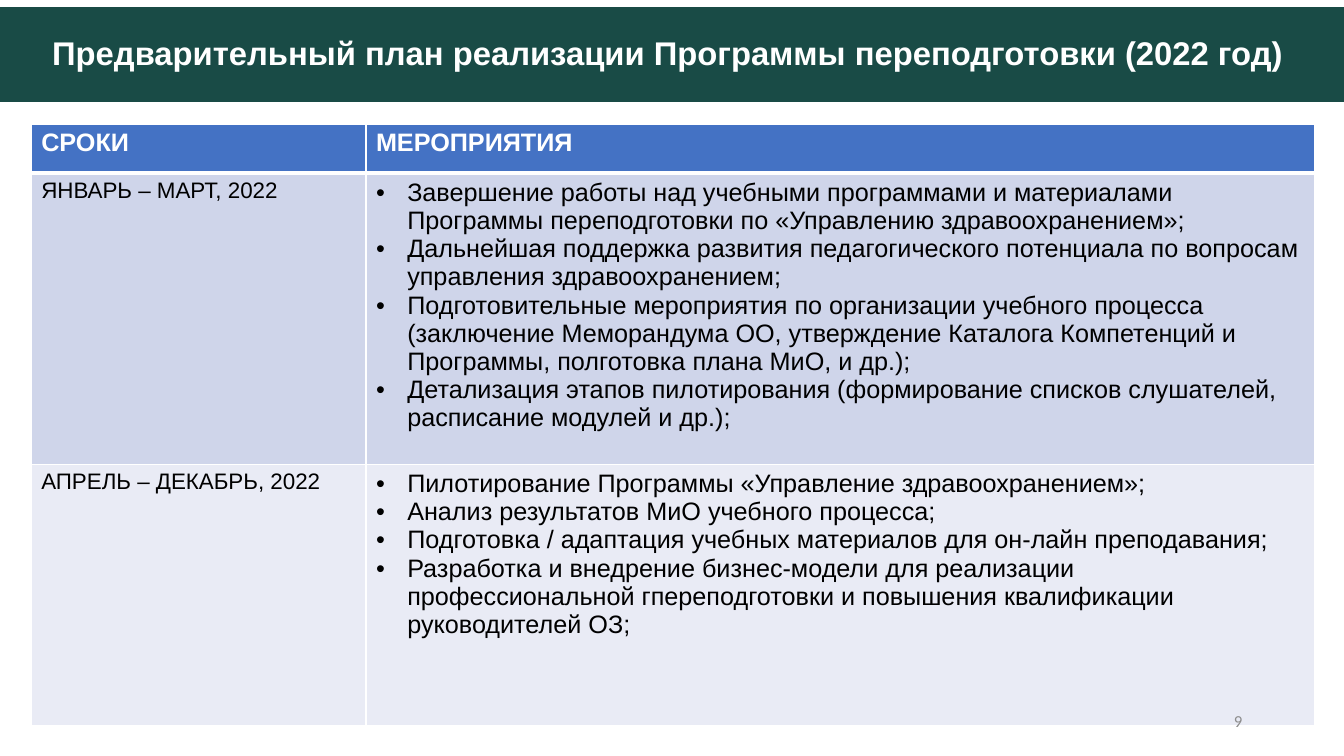
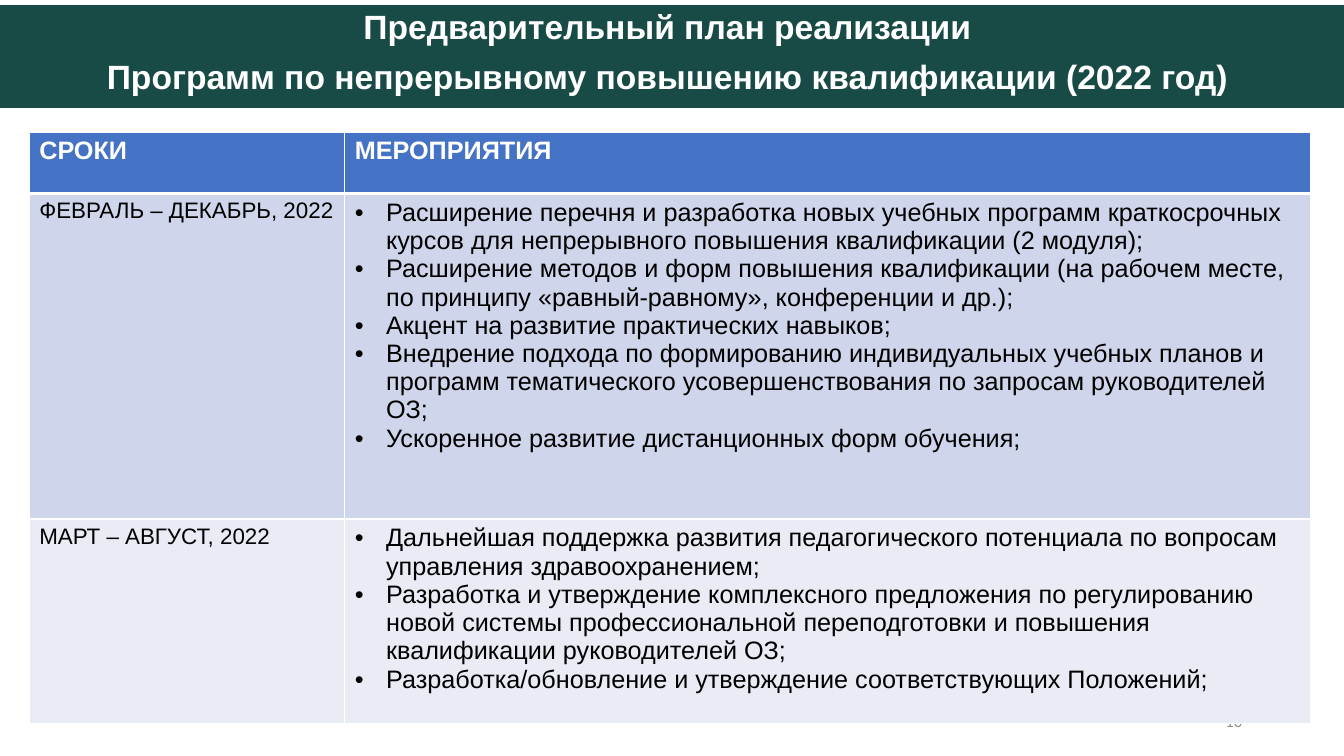
import pptx
import pptx.util
import pptx.dml.color
import pptx.enum.shapes
import pptx.enum.text
import pptx.oxml
import pptx.oxml.ns

COLORS = {
    "band": "194B46",
    "header": "4472C4",
    "odd_row": "CFD5EA",
    "even_row": "E9EBF5",
    "white": "FFFFFF",
    "black": "000000",
    "number": "8C8C8C",
}
SLIDE_WIDTH, SLIDE_HEIGHT = 13.33, 7.5
NUMBER_BOX = (9.42, 6.95, 3, 0.4)
BULLET_INDENT = 0.31
HEADINGS = ("СРОКИ", "МЕРОПРИЯТИЯ")
ROW_FILLS = ("header", "odd_row", "even_row")
ALIGN = pptx.enum.text.PP_ALIGN
ANCHOR = pptx.enum.text.MSO_ANCHOR

PLANS = [
    {
        "title": ["Предварительный план реализации Программы переподготовки (2022 год) "],
        "title_size": 23.4,
        "title_anchor": ANCHOR.MIDDLE,
        "title_space": 0,
        "band": (0.07, 0.94),
        "number": "9",
        "number_on_top": True,
        "table_corner": (0.31, 1.23),
        "columns": (3.32, 9.41),
        "rows": (0.49, 2.89, 2.59),
        "periods": [
            ("ЯНВАРЬ – МАРТ, 2022", [
                "Завершение работы над учебными программами и материалами Программы переподготовки по «Управлению здравоохранением»;",
                "Дальнейшая поддержка развития педагогического потенциала по вопросам управления здравоохранением;",
                "Подготовительные мероприятия по организации учебного процесса (заключение Меморандума ОО, утверждение Каталога Компетенций и Программы, полготовка плана МиО, и др.);",
                "Детализация этапов пилотирования (формирование списков слушателей, расписание модулей и др.);",
            ]),
            ("АПРЕЛЬ – ДЕКАБРЬ, 2022", [
                "Пилотирование Программы «Управление здравоохранением»;",
                "Анализ результатов МиО учебного процесса;",
                "Подготовка / адаптация учебных материалов для он-лайн преподавания;",
                "Разработка и внедрение бизнес-модели для реализации профессиональной гпереподготовки и повышения квалификации руководителей ОЗ;",
            ]),
        ],
    },
    {
        "title": [
            "Предварительный план реализации ",
            "Программ по непрерывному повышению квалификации (2022 год) ",
        ],
        "title_size": 24,
        "title_anchor": ANCHOR.TOP,
        "title_space": 10,
        "band": (0.05, 1.02),
        "number": "10",
        "number_on_top": False,
        "table_corner": (0.29, 1.31),
        "columns": (3.13, 9.58),
        "rows": (0.61, 3.23, 2.03),
        "periods": [
            ("ФЕВРАЛЬ – ДЕКАБРЬ, 2022", [
                "Расширение перечня и разработка новых учебных программ краткосрочных курсов для непрерывного повышения квалификации (2 модуля);",
                "Расширение методов и форм повышения квалификации (на рабочем месте, по принципу «равный-равному», конференции и др.);",
                "Акцент на развитие практических навыков;",
                "Внедрение подхода по формированию индивидуальных учебных планов и программ тематического усовершенствования по запросам руководителей ОЗ;",
                "Ускоренное развитие дистанционных форм обучения;",
            ]),
            ("МАРТ – АВГУСТ, 2022", [
                "Дальнейшая поддержка развития педагогического потенциала по вопросам управления здравоохранением;",
                "Разработка и утверждение комплексного предложения по регулированию новой системы профессиональной переподготовки и повышения квалификации руководителей ОЗ;",
                "Разработка/обновление и утверждение соответствующих Положений;",
            ]),
        ],
    },
]


def inches(*lengths):
    return [pptx.util.Inches(length) for length in lengths]


def set_fill(target, color):
    target.fill.solid()
    target.fill.fore_color.rgb = pptx.dml.color.RGBColor.from_string(COLORS[color])


def write_text(frame, lines, size, color="black", bold=False, font="Arial",
               align=ALIGN.LEFT, spacing=None, before=0, bullets=False):
    frame.word_wrap = True
    for index, line in enumerate(lines):
        paragraph = frame.add_paragraph() if index else frame.paragraphs[0]
        paragraph.alignment = align
        paragraph.space_before = pptx.util.Pt(before)
        if spacing:
            paragraph.line_spacing = spacing
        if bullets:
            add_bullet(paragraph)
        run = paragraph.add_run()
        run.text = line
        run.font.name = font
        run.font.size = pptx.util.Pt(size)
        run.font.bold = bold
        run.font.color.rgb = pptx.dml.color.RGBColor.from_string(COLORS[color])


def add_bullet(paragraph):
    properties = paragraph._p.get_or_add_pPr()
    indent = pptx.util.Inches(BULLET_INDENT)
    properties.set("marL", str(indent))
    properties.set("indent", str(-indent))
    namespace = pptx.oxml.ns.nsdecls("a")
    for markup in (f'<a:buFont {namespace} typeface="Arial"/>',
                   f'<a:buChar {namespace} char="•"/>'):
        properties.append(pptx.oxml.parse_xml(markup))


def add_borders(cell, top, bottom):
    properties = cell._tc.get_or_add_tcPr()
    namespace = pptx.oxml.ns.nsdecls("a")
    for side, width in (("L", 1), ("R", 1), ("T", top), ("B", bottom)):
        properties.append(pptx.oxml.parse_xml(
            f'<a:ln{side} {namespace} w="{pptx.util.Pt(width)}"><a:solidFill>'
            f'<a:srgbClr val="{COLORS["white"]}"/></a:solidFill></a:ln{side}>'))


def add_band(slide, plan):
    top, height = plan["band"]
    band = slide.shapes.add_shape(pptx.enum.shapes.MSO_SHAPE.RECTANGLE,
                                  *inches(0, top, SLIDE_WIDTH, height))
    band.shadow.inherit = False
    band.line.fill.background()
    set_fill(band, "band")
    band.text_frame.vertical_anchor = plan["title_anchor"]
    write_text(band.text_frame, plan["title"], plan["title_size"], color="white",
               bold=True, align=ALIGN.CENTER, spacing=0.9, before=plan["title_space"])


def add_number(slide, plan):
    box = slide.shapes.add_textbox(*inches(*NUMBER_BOX))
    box.text_frame.vertical_anchor = ANCHOR.MIDDLE
    write_text(box.text_frame, [plan["number"]], 12, color="number",
               font="Calibri", align=ALIGN.RIGHT)


def add_plan_table(slide, plan):
    columns, rows = plan["columns"], plan["rows"]
    table = slide.shapes.add_table(
        len(rows), len(columns),
        *inches(*plan["table_corner"], sum(columns), sum(rows))).table
    for column, width in zip(table.columns, columns):
        column.width = pptx.util.Inches(width)
    for row, height in zip(table.rows, rows):
        row.height = pptx.util.Inches(height)
    for index, fill in enumerate(ROW_FILLS):
        for cell in table.rows[index].cells:
            add_borders(cell, top=3 if index == 1 else 1, bottom=1 if index else 3)
            set_fill(cell, fill)
    for column, heading in enumerate(HEADINGS):
        write_text(table.cell(0, column).text_frame, [heading], 18, color="white", bold=True)
    for row, (period, activities) in enumerate(plan["periods"], 1):
        write_text(table.cell(row, 0).text_frame, [period], 16)
        write_text(table.cell(row, 1).text_frame, activities, 18, bullets=True)


def main():
    presentation = pptx.Presentation()
    presentation.slide_width, presentation.slide_height = inches(SLIDE_WIDTH, SLIDE_HEIGHT)
    for plan in PLANS:
        slide = presentation.slides.add_slide(presentation.slide_layouts[6])
        add_band(slide, plan)
        layers = [add_number, add_plan_table]
        for add_layer in reversed(layers) if plan["number_on_top"] else layers:
            add_layer(slide, plan)
    presentation.save("out.pptx")


if __name__ == "__main__":
    main()
